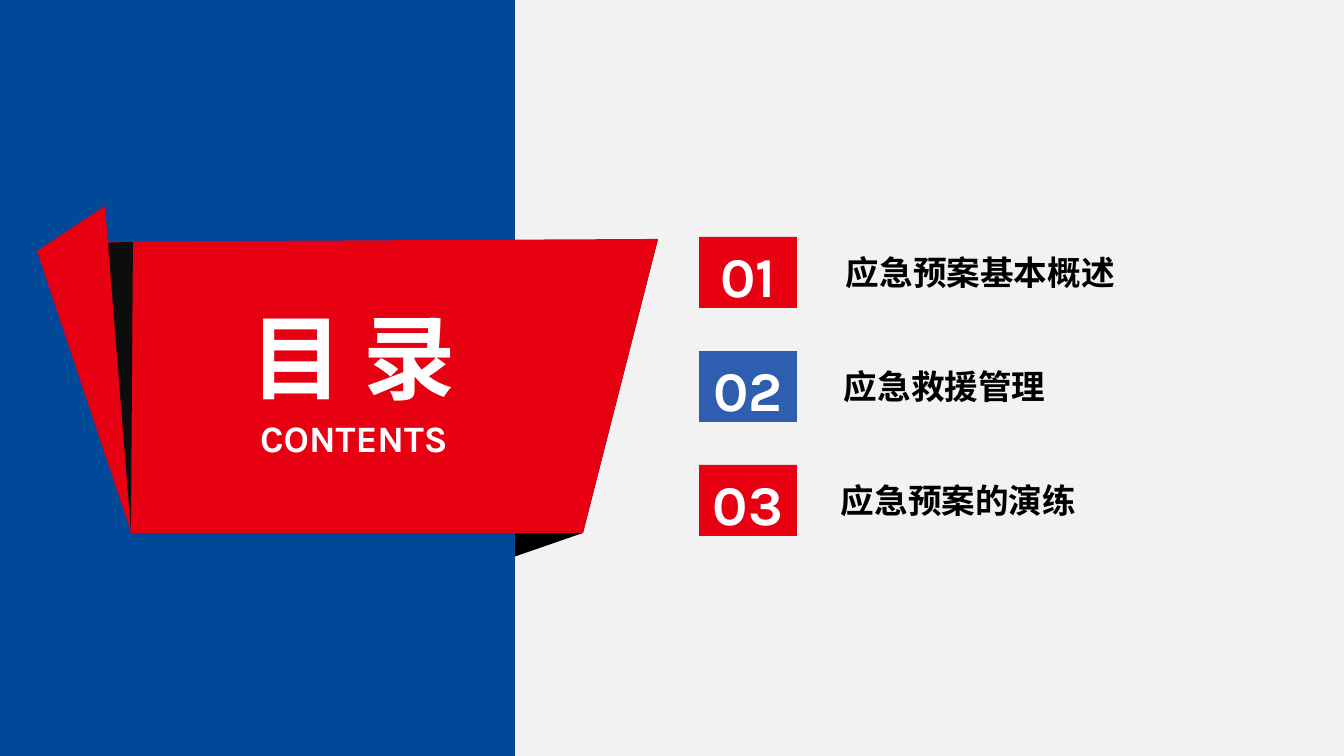
from pptx import Presentation
from pptx.dml.color import RGBColor
from pptx.enum.shapes import MSO_SHAPE
from pptx.enum.text import MSO_ANCHOR, PP_ALIGN
from pptx.util import Pt

RECT = MSO_SHAPE.RECTANGLE
TOP, MIDDLE = MSO_ANCHOR.TOP, MSO_ANCHOR.MIDDLE
LEFT, CENTER = PP_ALIGN.LEFT, PP_ALIGN.CENTER
TITLE_ONLY = 5
PX = 914400 / 100.8  # EMU in one px

THEME = {
    "font": "Karla",
    "background": RGBColor(0xF2, 0xF2, 0xF2),
    "panel": RGBColor(0x00, 0x48, 0x98),
    "red": RGBColor(0xE6, 0x00, 0x12),
    "blue": RGBColor(0x2F, 0x5E, 0xB0),
    "fold": RGBColor(0x0D, 0x0D, 0x0D),
    "black": RGBColor(0x00, 0x00, 0x00),
    "white": RGBColor(0xFF, 0xFF, 0xFF),
    "title": Pt(66),
    "subtitle": Pt(26.6),
    "number": Pt(40),
    "item": Pt(24),
}


def paint(sp, color):
    """Give a shape a flat fill without outline or shadow."""
    sp.shadow.inherit = False
    sp.fill.solid()
    sp.fill.fore_color.rgb = THEME[color]
    sp.line.fill.background()


def write(sp, text, size, color, align, anchor, inset=None, wrap=False):
    tf = sp.text_frame
    tf.word_wrap, tf.vertical_anchor = wrap, anchor
    if inset is not None:
        for side in ("left", "top", "right", "bottom"):
            setattr(tf, f"margin_{side}", inset)
    p = tf.paragraphs[0]
    p.alignment = align
    r = p.add_run()
    r.text = text
    font = {"name": THEME["font"], "size": THEME[size], "bold": True}
    for name, value in font.items():
        setattr(r.font, name, value)
    r.font.color.rgb = THEME[color]


prs = Presentation()
prs.slide_width, prs.slide_height = round(1344 * PX), round(756 * PX)
s = prs.slides.add_slide(prs.slide_layouts[TITLE_ONLY])
s.background.fill.solid()
s.background.fill.fore_color.rgb = THEME["background"]

# Ribbon: the shadow lies behind the blue panel, the rest in front of it
ribbon = [
    ("black", [(583, 533), (372, 606), (658, 239)]),
    ("red", [(583, 533), (131, 533), (52, 242), (658, 239)]),
    ("fold", [(56, 244), (133, 242), (131, 532)]),
    ("red", [(37, 251), (105, 206), (131, 532)]),
]
for i, (color, points) in enumerate(ribbon):
    outline = s.shapes.build_freeform(*points[0], scale=PX)
    outline.add_line_segments(points[1:], close=True)
    paint(outline.convert_to_shape(), color)
    if i == 0:
        panel = s.shapes.add_shape(RECT, 0, 0, round(515 * PX), prs.slide_height)
        paint(panel, "panel")

# Heading
title = s.shapes.title
title.left, title.top, title.width, title.height = (round(v * PX) for v in (247, 300, 213, 112))
write(title, "目 录", "title", "white", CENTER, TOP, inset=0)
s.shapes._spTree.append(title._element)  # bring to front

subtitle = s.shapes.add_textbox(*(round(v * PX) for v in (256, 415, 196, 45)))
write(subtitle, "CONTENTS", "subtitle", "white", CENTER, TOP, inset=0)

# Numbered contents
items = [
    ("应急预案基本概述", "red", 836),
    ("应急救援管理", "blue", 834),
    ("应急预案的演练", "red", 831),
]
for i, (text, color, left) in enumerate(items):
    top = 237 + 114 * i
    badge = s.shapes.add_shape(RECT, *(round(v * PX) for v in (699, top, 98, 71)))
    paint(badge, color)
    write(badge, f"{i + 1:02}", "number", "white", CENTER, TOP, wrap=True)
    badge.text_frame.paragraphs[0].space_before = Pt(8)

    label = s.shapes.add_textbox(*(round(v * PX) for v in (left, top - 22, 460, 115)))
    write(label, text, "item", "black", LEFT, MIDDLE, wrap=True)

prs.save("out.pptx")
